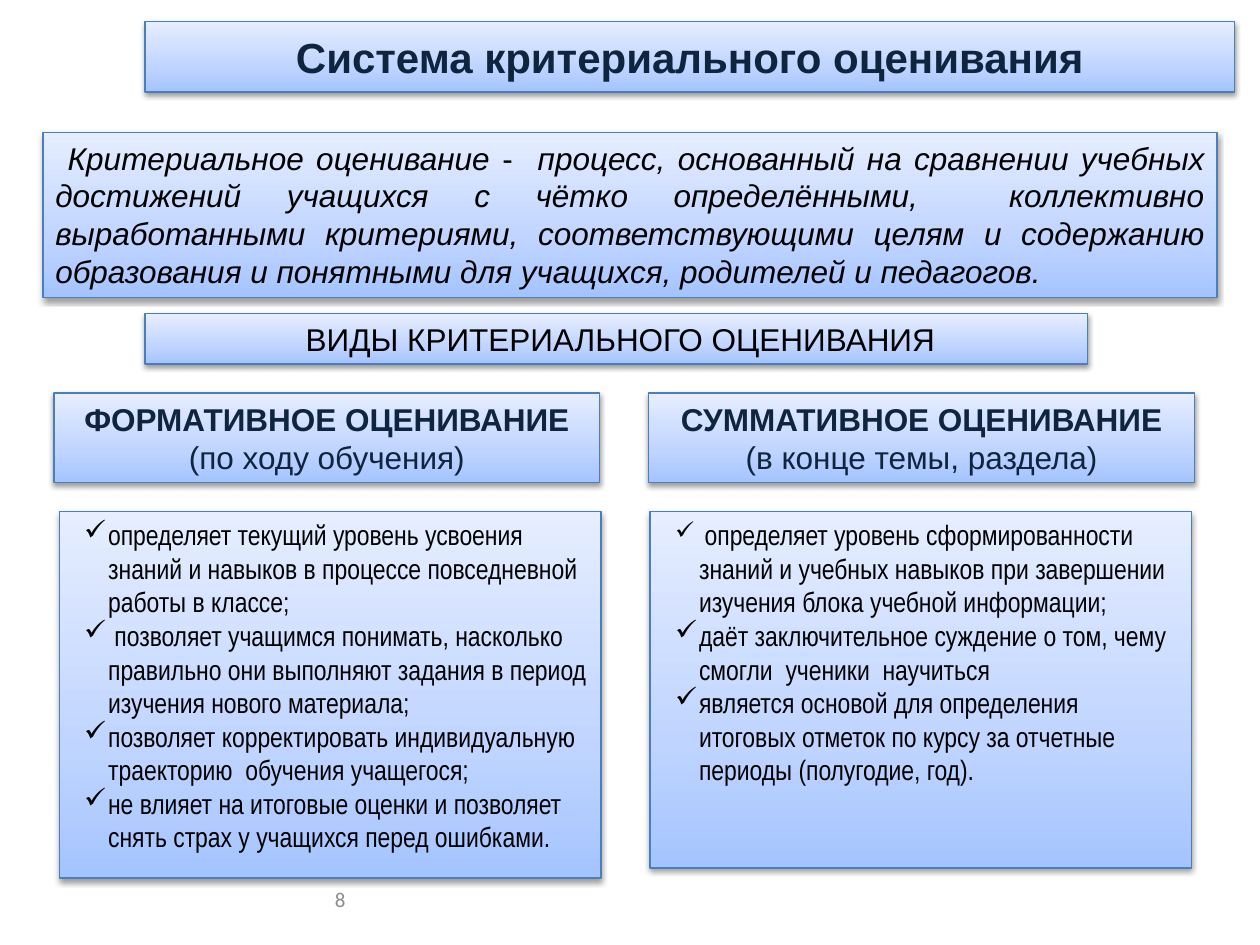
"""Builds a slide on the criteria-based assessment system."""
from lxml import etree
from pptx import Presentation
from pptx.dml.color import RGBColor
from pptx.enum.shapes import MSO_SHAPE
from pptx.enum.text import MSO_ANCHOR, PP_ALIGN
from pptx.oxml.ns import qn
from pptx.util import Inches, Pt

RECTANGLE = MSO_SHAPE.RECTANGLE
TOP, MIDDLE = MSO_ANCHOR.TOP, MSO_ANCHOR.MIDDLE
LEFT, CENTER, RIGHT, JUSTIFY = PP_ALIGN.LEFT, PP_ALIGN.CENTER, PP_ALIGN.RIGHT, PP_ALIGN.JUSTIFY

COLORS = {
    "deep": "A4C4FF", "soft": "BFD4FF", "pale": "E6EEFF", "border": "4B7EBC",
    "shadow": "000000", "body": "000000", "heading": "0F243E", "number": "8C8C8C",
}
GRADIENT = [(0, "deep"), (35, "soft"), (100, "pale")]

CRITERIA = [
    (0.43, 0.47, 2.91, "ФОРМАТИВНОЕ ОЦЕНИВАНИЕ", "(по ходу обучения)", [
        ["определяет текущий уровень усвоения знаний и навыков в процессе повседневной работы в классе;"],
        [" позволяет учащимся понимать, насколько правильно они выполняют задания в период изучения нового материала;"],
        ["позволяет корректировать индивидуальную траекторию  обучения учащегося;"],
        ["не влияет на итоговые оценки и позволяет снять страх у учащихся перед ошибками."],
    ]),
    (5.15, 5.16, 2.83, "СУММАТИВНОЕ ОЦЕНИВАНИЕ", "(в конце темы, раздела)", [
        [" ", "определяет уровень сформированности знаний и учебных навыков при завершении изучения блока учебной информации;"],
        ["даёт заключительное суждение о том, чему смогли  ученики  научиться"],
        ["является основой для определения итоговых отметок по курсу за отчетные периоды (полугодие, год)."],
    ]),
]


def add_xml(parent, tag, **attributes):
    """Append a DrawingML child element and return it."""
    return etree.SubElement(parent, qn(tag), attributes)


def add_panel(slide, left, top, width, height, anchor=MIDDLE):
    """Add a gradient rectangle with a soft shadow and return its text frame."""
    panel = slide.shapes.add_shape(
        RECTANGLE, Inches(left), Inches(top), Inches(width), Inches(height))
    panel.fill.gradient()
    panel.fill.gradient_angle = 90
    stops = panel._element.spPr.find(".//" + qn("a:gsLst"))
    for stop in list(stops):
        stops.remove(stop)
    for position, color in GRADIENT:
        stop = add_xml(stops, "a:gs", pos=str(position * 1000))
        add_xml(stop, "a:srgbClr", val=COLORS[color])
    panel.line.color.rgb = RGBColor.from_string(COLORS["border"])
    panel.line.width = Pt(0.75)
    panel.shadow.inherit = False
    effects = panel._element.spPr.find(qn("a:effectLst"))
    shadow = add_xml(effects, "a:outerShdw", blurRad="40000", dist="20000",
                     dir="5400000", rotWithShape="0")
    shade = add_xml(shadow, "a:srgbClr", val=COLORS["shadow"])
    add_xml(shade, "a:alpha", val="38000")
    frame = panel.text_frame
    frame.word_wrap = True
    frame.vertical_anchor = anchor
    return frame


def write(paragraph, texts, size, color="body", align=CENTER, face="Arial",
          bold=False, italic=False):
    """Fill a paragraph with runs sharing one font and return the runs."""
    paragraph.alignment = align
    font = paragraph.font
    font.size, font.name, font.bold, font.italic = Pt(size), face, bold, italic
    font.color.rgb = RGBColor.from_string(COLORS[color])
    runs = []
    for text in texts:
        run = paragraph.add_run()
        run.text = text
        runs.append(run)
    return runs


def add_checkmark(paragraph):
    """Give a paragraph a hanging checkmark bullet."""
    properties = paragraph._p.get_or_add_pPr()
    properties.set("marL", str(Inches(0.29)))
    properties.set("indent", str(Inches(-0.19)))
    bullet = add_xml(properties, "a:buChar", char="✓")
    properties.insert(0, bullet)


def add_heading(slide, left, name, timing):
    """Add the heading panel of one kind of assessment."""
    frame = add_panel(slide, left, 3.12, 4.33, 0.71)
    write(frame.paragraphs[0], [name], 18, "heading", bold=True)
    write(frame.add_paragraph(), [timing], 18, "heading")


def add_checklist(slide, left, height, items):
    """Add the panel listing the traits of one kind of assessment."""
    frame = add_panel(slide, left, 4.06, 4.3, height, TOP)
    for index, texts in enumerate(items):
        paragraph = frame.add_paragraph() if index else frame.paragraphs[0]
        runs = write(paragraph, texts, 16, align=LEFT, face="Arial Narrow")
        if len(runs) > 1:
            runs[0].font.size = Pt(14)
        add_checkmark(paragraph)


def add_definition(slide):
    """Add the definition of criteria-based assessment."""
    frame = add_panel(slide, 0.34, 1.05, 9.32, 1.31, TOP)
    term, dash, meaning = write(frame.paragraphs[0], [
        " Критериальное оценивание ",
        "-  ",
        "процесс, основанный на сравнении учебных достижений учащихся с чётко "
        "определёнными,  коллективно выработанными критериями, соответствующими "
        "целям и содержанию образования и понятными для учащихся, родителей и педагогов.",
    ], 18, align=JUSTIFY, italic=True)
    dash.font.italic = False


def add_slide_number(slide, number):
    """Add the slide number at the foot."""
    box = slide.shapes.add_textbox(Inches(0.67), Inches(6.94), Inches(2.17), Inches(0.4))
    frame = box.text_frame
    frame.word_wrap = True
    frame.vertical_anchor = MIDDLE
    write(frame.paragraphs[0], [number], 12, "number", RIGHT, "Calibri")


def main():
    """Build and save the slide."""
    deck = Presentation()
    deck.slide_width, deck.slide_height = Inches(10), Inches(7.5)
    slide = deck.slides.add_slide(deck.slide_layouts[6])
    title = add_panel(slide, 1.15, 0.17, 8.65, 0.56)
    write(title.paragraphs[0], ["Система критериального оценивания"], 24, "heading", bold=True)
    add_slide_number(slide, "8")
    for heading_left, list_left, height, name, timing, items in CRITERIA:
        add_checklist(slide, list_left, height, items)
        add_heading(slide, heading_left, name, timing)
    kinds = add_panel(slide, 1.15, 2.49, 7.48, 0.4, TOP)
    write(kinds.paragraphs[0], [" ВИДЫ КРИТЕРИАЛЬНОГО ОЦЕНИВАНИЯ"], 18)
    add_definition(slide)
    deck.save("out.pptx")


if __name__ == "__main__":
    main()
